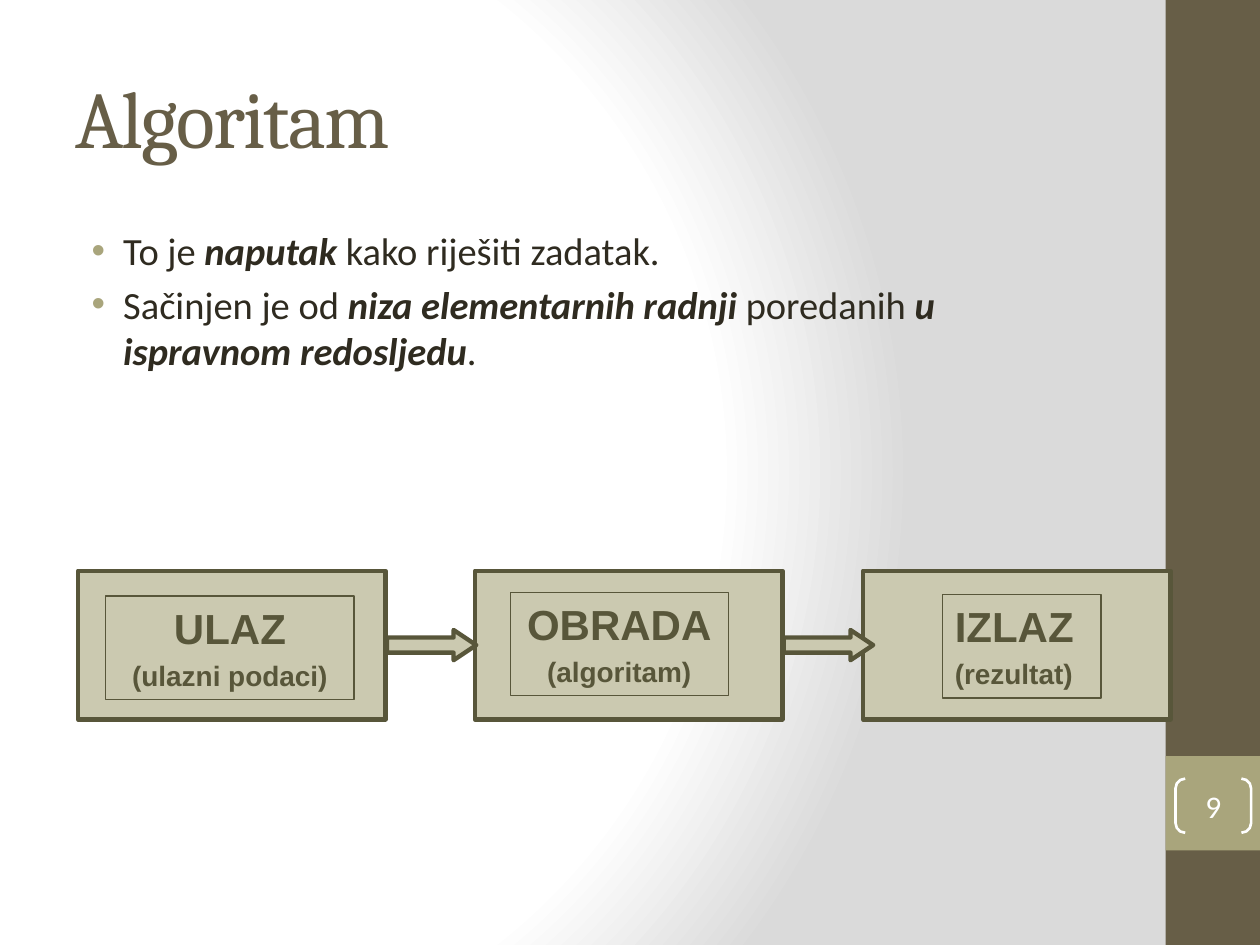
from pptx import Presentation
from pptx.dml.color import RGBColor
from pptx.enum.shapes import MSO_SHAPE
from pptx.enum.text import MSO_ANCHOR, PP_ALIGN
from pptx.oxml import parse_xml
from pptx.oxml.ns import nsdecls
from pptx.util import Inches, Pt

RECTANGLE, ARROW, BRACKETS = MSO_SHAPE.RECTANGLE, MSO_SHAPE.RIGHT_ARROW, MSO_SHAPE.DOUBLE_BRACKET
TOP, MIDDLE = MSO_ANCHOR.TOP, MSO_ANCHOR.MIDDLE
LEFT, CENTER = PP_ALIGN.LEFT, PP_ALIGN.CENTER

COLORS = {
    "white": "FFFFFF", "shade": "DADADA", "brown": "675E47", "olive": "A9A57C",
    "text": "2F2B20", "box": "CBC9B0", "outline": "58563A",
}

# Content: bullets are lists of (text, emphasised)
TITLE = "Algoritam"
PAGE_NUMBER = "9"
BULLETS = [
    [("To je ", False), ("naputak", True), (" kako riješiti zadatak.", False)],
    [("Sačinjen je od ", False), ("niza elementarnih radnji ", True),
     ("poredanih ", False), ("u ispravnom redosljedu", True), (".", False)],
]
# Step: box left, label (left, top, width), alignment, heading, note
STEPS = [
    (0.62, (0.84, 4.73, 1.97), CENTER, "ULAZ", "(ulazni podaci)"),
    (3.77, (4.05, 4.70, 1.73), CENTER, "OBRADA", "(algoritam)"),
    (6.85, (7.48, 4.72, 1.26), LEFT, "IZLAZ", "(rezultat)"),
]
BOX_TOP, BOX_WIDTH, BOX_HEIGHT = 4.53, 2.44, 1.18
ARROW_TOP, ARROW_WIDTH, ARROW_HEIGHT = 5, 0.71, 0.24
LABEL_HEIGHT = 0.82


def color(name):
    return RGBColor.from_string(COLORS[name])


def add_shape(shapes, kind, bounds, fill=None, line=None, weight=0):
    shape = shapes.add_shape(kind, *map(Inches, bounds))
    shape.shadow.inherit = False
    if fill:
        shape.fill.solid()
        shape.fill.fore_color.rgb = color(fill)
    else:
        shape.fill.background()
    if line:
        shape.line.color.rgb = color(line)
        shape.line.width = Pt(weight)
    else:
        shape.line.fill.background()
    return shape


def add_text_box(slide, bounds, anchor):
    frame = slide.shapes.add_textbox(*map(Inches, bounds)).text_frame
    frame.word_wrap = True
    frame.vertical_anchor = anchor
    return frame


def style(span, size, font, ink, bold=False, italic=False):
    span.font.size = Pt(size)
    span.font.name = font
    span.font.color.rgb = color(ink)
    span.font.bold = bold
    span.font.italic = italic


def space_before(para):
    para._p.get_or_add_pPr().append(parse_xml(
        f'<a:spcBef {nsdecls("a")}><a:spcPct val="20000"/></a:spcBef>'))


def add_bullet(para):
    properties = para._p.get_or_add_pPr()
    properties.set("marL", str(Inches(0.38)))
    properties.set("indent", str(Inches(-0.25)))
    for markup in (
        f'<a:buClr {nsdecls("a")}><a:srgbClr val="{COLORS["olive"]}"/></a:buClr>',
        f'<a:buFont {nsdecls("a")} typeface="Arial"/>',
        f'<a:buChar {nsdecls("a")} char="•"/>',
    ):
        properties.append(parse_xml(markup))


def set_background(slide):
    stops = "".join(
        f'<a:gs pos="{place * 1000}"><a:srgbClr val="{COLORS[name]}"/></a:gs>'
        for place, name in [(0, "white"), (75, "white"), (100, "shade")])
    slide._element.cSld.insert(0, parse_xml(
        f'<p:bg {nsdecls("p", "a")}><p:bgPr><a:gradFill rotWithShape="1">'
        f'<a:gsLst>{stops}</a:gsLst><a:path path="circle">'
        '<a:fillToRect l="20000" t="50000" r="100000" b="50000"/></a:path>'
        '</a:gradFill><a:effectLst/></p:bgPr></p:bg>'))


def add_text(slide):
    title = add_text_box(slide, (0.5, 0.3, 8.33, 1.25), MIDDLE).paragraphs[0]
    title.text = TITLE
    style(title.runs[0], 46, "Cambria", "brown")
    title.runs[0]._r.get_or_add_rPr().set("spc", "-100")

    body = add_text_box(slide, (0.5, 1.75, 8.33, 5.25), TOP)
    for index, spans in enumerate(BULLETS):
        para = body.add_paragraph() if index else body.paragraphs[0]
        space_before(para)
        add_bullet(para)
        for words, strong in spans:
            span = para.add_run()
            span.text = words
            style(span, 22, "Calibri", "text", strong, strong)


def add_page_number(slide):
    bracket = add_shape(slide.shapes, BRACKETS, (9.33, 6.18, 0.6, 0.43), None, "white", 1.5)
    bracket.adjustments[0] = 0.179
    frame = bracket.text_frame
    frame.margin_left = frame.margin_right = frame.margin_top = frame.margin_bottom = 0
    frame.vertical_anchor = MIDDLE
    frame.text = PAGE_NUMBER
    frame.paragraphs[0].alignment = CENTER
    style(frame.paragraphs[0].runs[0], 18, "Calibri", "white")


def add_diagram(slide):
    shapes = slide.shapes.add_group_shape().shapes
    for left, *_ in STEPS:
        add_shape(shapes, RECTANGLE, (left, BOX_TOP, BOX_WIDTH, BOX_HEIGHT),
                  "box", "outline", 2.5)
    # Each arrow starts at the right edge of its box
    for left, *_ in STEPS[:-1]:
        arrow = add_shape(shapes, ARROW,
                          (left + BOX_WIDTH + 0.01, ARROW_TOP, ARROW_WIDTH, ARROW_HEIGHT),
                          "box", "outline", 2.5)
        arrow.adjustments[0], arrow.adjustments[1] = 0.5, 0.75
    for _, place, alignment, heading, note in STEPS:
        label = add_shape(shapes, RECTANGLE, (*place, LABEL_HEIGHT), "box", "outline", 0.75)
        frame = label.text_frame
        frame.vertical_anchor = TOP
        frame.text = f"{heading}\n{note}"
        for para, size in zip(frame.paragraphs, (24, 16)):
            para.alignment = alignment
            space_before(para)
            style(para.runs[0], size, "Arial", "outline", bold=True)


def main():
    deck = Presentation()
    deck.slide_width, deck.slide_height = Inches(10), Inches(7.5)
    slide = deck.slides.add_slide(deck.slide_layouts[6])
    set_background(slide)
    # Side band and page number square
    add_shape(slide.shapes, RECTANGLE, (9.25, 0, 0.75, 7.5), "brown")
    add_shape(slide.shapes, RECTANGLE, (9.25, 6, 0.75, 0.75), "olive")
    add_text(slide)
    add_page_number(slide)
    add_diagram(slide)
    deck.save("out.pptx")


if __name__ == "__main__":
    main()
